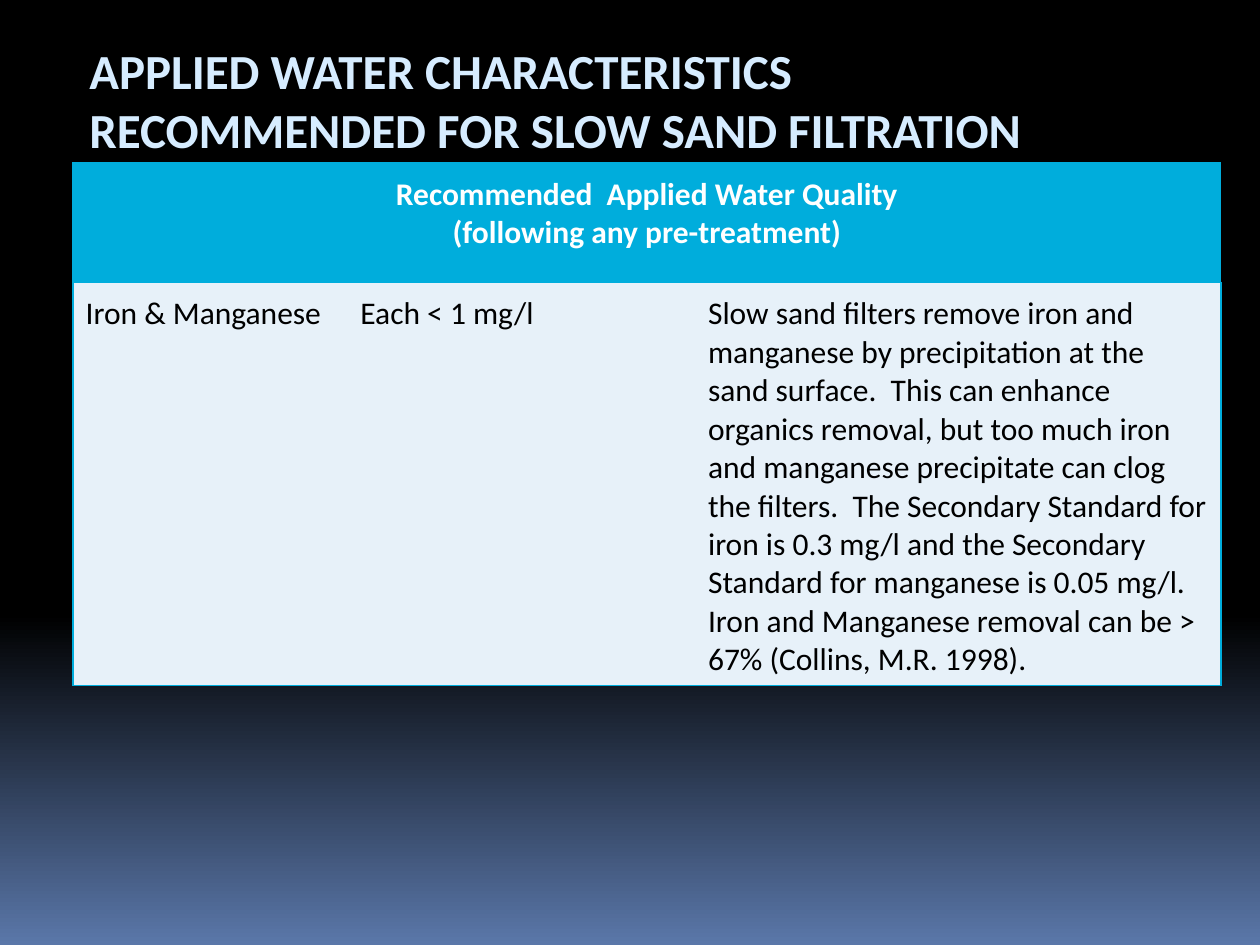
"""Build a slide on water quality recommended for slow sand filtration."""
from lxml.etree import SubElement
from pptx import Presentation
from pptx.dml.color import RGBColor
from pptx.enum.text import MSO_ANCHOR, MSO_AUTO_SIZE, PP_ALIGN
from pptx.oxml.ns import qn
from pptx.util import Inches, Pt

TITLE = "APPLIED WATER CHARACTERISTICS\nRECOMMENDED FOR SLOW SAND FILTRATION"
HEAD = "Recommended  Applied Water Quality\n(following any pre-treatment)"
ROW = [
    "Iron & Manganese",
    "Each < 1 mg/l",
    "Slow sand filters remove iron and manganese by precipitation at the sand "
    "surface.  This can enhance organics removal, but too much iron and manganese "
    "precipitate can clog the filters.  The Secondary Standard for iron is 0.3 mg/l "
    "and the Secondary Standard for manganese is 0.05 mg/l.  Iron and Manganese "
    "removal can be > 67% (Collins, M.R. 1998).",
]


def tint(code):
    """Turn a hex string into a colour."""
    return RGBColor.from_string(code)


class Deck:
    """Hold the style and the current slide."""

    font = "Calibri"
    cyan, pale, ice = "00ADDC", "E7F1F9", "D6ECFF"
    black, white, blue = "000000", "FFFFFF", "5A77A9"

    def __init__(self, wide, high):
        """Open a deck of the given size in inches with one slide."""
        self.prs = Presentation()
        self.prs.slide_width, self.prs.slide_height = Inches(wide), Inches(high)
        self.slide = self.prs.slides.add_slide(self.prs.slide_layouts[5])

    def across(self, share):
        """Turn a percentage of the slide's width into a length."""
        return int(share * self.prs.slide_width / 100)

    def down(self, share):
        """Turn a percentage of the slide's height into a length."""
        return int(share * self.prs.slide_height / 100)

    def place(self, left, top, width, height):
        """Turn percentages of the slide into a position and size."""
        return self.across(left), self.down(top), self.across(width), self.down(height)

    def fade(self, start):
        """Fade the background downwards from black to blue."""
        fill = self.slide.background.fill
        fill.gradient()
        fill.gradient_angle = 270
        for stop, spot, code in zip(fill.gradient_stops, (start, 1), (self.black, self.blue)):
            stop.position, stop.color.rgb = spot, tint(code)

    def label(self, frame, text, size, code, bold, align=PP_ALIGN.LEFT):
        """Fill a text frame and format its runs."""
        frame.text = text
        for para in frame.paragraphs:
            para.alignment = align
            for run in para.runs:
                font = run.font
                font.name, font.size, font.bold = self.font, Pt(size), bold
                font.color.rgb = tint(code)

    def title(self, text, *area):
        """Move and fill the title placeholder."""
        shape = self.slide.shapes.title
        shape.left, shape.top, shape.width, shape.height = self.place(*area)
        frame = shape.text_frame
        frame.word_wrap, frame.auto_size = True, MSO_AUTO_SIZE.NONE
        frame.vertical_anchor = MSO_ANCHOR.TOP
        self.label(frame, text, 28, self.ice, True)

    def edge(self, cell, sides):
        """Draw the named sides of a cell and clear the others."""
        props = cell._tc.get_or_add_tcPr()
        for spot, side in enumerate("LRTB"):
            line = SubElement(props, qn("a:ln" + side), w=str(Pt(1)))
            if side in sides:
                fill = SubElement(line, qn("a:solidFill"))
                SubElement(fill, qn("a:srgbClr"), val=self.cyan)
            else:
                SubElement(line, qn("a:noFill"))
            props.insert(spot, line)

    def table(self, head, row, cols, rows, *area):
        """Add a table with one merged head above one row."""
        grid = self.slide.shapes.add_table(2, len(row), *self.place(*area)).table
        for col, share in zip(grid.columns, cols):
            col.width = self.across(share)
        for line, share in zip(grid.rows, rows):
            line.height = self.down(share)
        last = len(row) - 1
        grid.cell(0, 0).merge(grid.cell(0, last))
        for top, fill in enumerate((self.cyan, self.pale)):
            for spot, text in enumerate(row):
                cell = grid.cell(top, spot)
                cell.fill.solid()
                cell.fill.fore_color.rgb = tint(fill)
                cell.margin_left = cell.margin_right = cell.margin_top = Inches(0.1)
                cell.margin_bottom = Inches(0.05)
                self.edge(cell, "TB" + "L" * (spot == 0) + "R" * (spot == last))
                if top:
                    self.label(cell.text_frame, text, 18, self.black, False)
        self.label(grid.cell(0, 0).text_frame, head, 18, self.white, True, PP_ALIGN.CENTER)


def main():
    """Build and save the slide."""
    deck = Deck(10, 7.5)
    deck.fade(0.65)
    deck.title(TITLE, 6.1, 3.6, 83.8, 13.87)
    cols, rows = (21.8, 27.6, 41.7), (12.67, 42.67)
    deck.table(HEAD, ROW, cols, rows, 5.8, 17.2, sum(cols), sum(rows))
    deck.prs.save("out.pptx")


if __name__ == "__main__":
    main()
